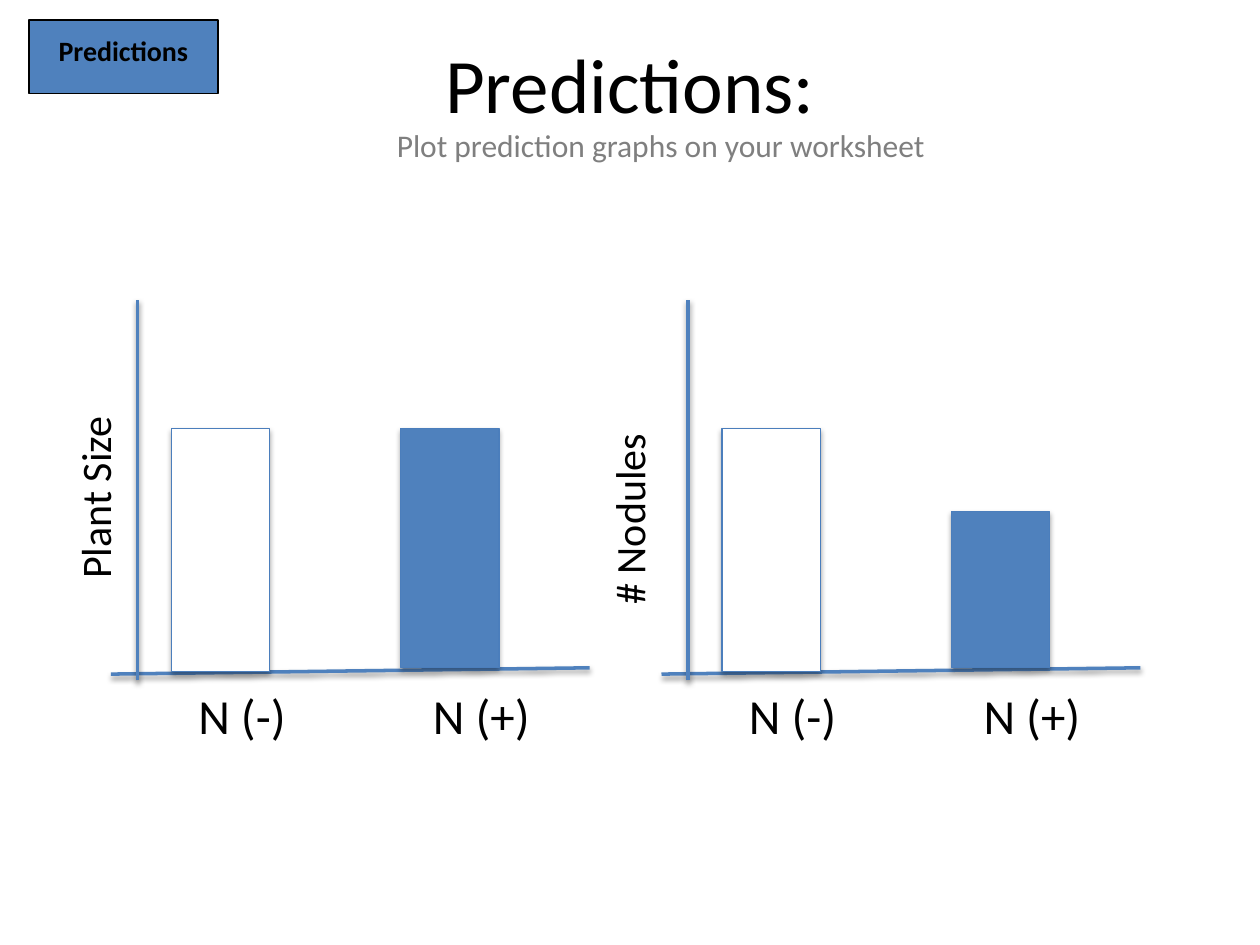
from lxml import etree
from pptx import Presentation, util as u
from pptx.dml.color import RGBColor
from pptx.enum import shapes, text
from pptx.oxml.ns import qn

COLUMNS, ROWS = 100, 75
BLUE, EDGE, BLACK, WHITE, GRAY = "4F81BD", "4B7EBC", "000000", "FFFFFF", "7F7F7F"

deck = Presentation()
deck.slide_width, deck.slide_height = u.Inches(10), u.Inches(7.5)
page = deck.slides.add_slide(deck.slide_layouts[6])


def color(code):
    return RGBColor.from_string(code)


def across(columns):
    return round(deck.slide_width * columns / COLUMNS)


def down(rows):
    return round(deck.slide_height * rows / ROWS)


def place(left, top, width, height):
    return across(left), down(top), across(width), down(height)


def add_shadow(item, opacity, distance):
    """Give a shape or connector a soft shadow that falls straight down."""
    properties = item._element.spPr
    effects = properties.find(qn("a:effectLst"))
    if effects is None:
        effects = etree.SubElement(properties, qn("a:effectLst"))
    shadow = etree.SubElement(effects, qn("a:outerShdw"), blurRad=str(u.Pt(3.1)),
                              dist=str(u.Pt(distance)), dir="5400000", rotWithShape="0")
    tone = etree.SubElement(shadow, qn("a:srgbClr"), val=BLACK)
    etree.SubElement(tone, qn("a:alpha"), val=str(opacity * 1000))


def add_text(words, box, size, ink=BLACK, bold=False, rotation=0,
             anchor=text.MSO_ANCHOR.TOP):
    label = page.shapes.add_textbox(*place(*box))
    label.rotation = rotation
    frame = label.text_frame
    frame.word_wrap = True
    frame.vertical_anchor = anchor
    para = frame.paragraphs[0]
    para.text = words
    para.alignment = text.PP_ALIGN.CENTER
    para.font.name, para.font.size, para.font.bold = "Calibri", u.Pt(size), bold
    para.font.color.rgb = color(ink)


def add_block(box, fill, edge):
    block = page.shapes.add_shape(shapes.MSO_SHAPE.RECTANGLE, *place(*box))
    block.shadow.inherit = False
    block.fill.solid()
    block.fill.fore_color.rgb = color(fill)
    block.line.color.rgb = color(edge)
    block.line.width = u.Pt(0.75)
    return block


def add_axis(x1, y1, x2, y2):
    axis = page.shapes.add_connector(shapes.MSO_CONNECTOR.STRAIGHT, across(x1),
                                     down(y1), across(x2), down(y2))
    axis.line.color.rgb = color(BLUE)
    axis.line.width = u.Pt(2)
    add_shadow(axis, 38, 1.6)


def add_heading(left, top, width, height):
    add_text("Predictions:", (left, top, width, height), 44,
             anchor=text.MSO_ANCHOR.MIDDLE)


def add_graph(left, top, width, height, measure, measure_center, bar_tops):
    """Sketch two bars on a pair of axes; centre and tops are offsets in the box."""
    # Axes
    baseline = top + height
    add_axis(left, baseline - 0.5, left + width, baseline - 1)
    add_axis(left + 2.1, baseline, left + 2.1, top)

    # Group names, one per half of the graph
    half = width / 2
    for index, name in enumerate(("N (-)", "N (+)")):
        add_text(name, (left + 1.8 + index * half, baseline - 0.1, 17.2, 5.7), 28)

    # Bars, standing on the slightly sloping baseline
    for index, (bar_top, fill) in enumerate(zip(bar_tops, (WHITE, BLUE))):
        foot = height - 0.7 - 0.3 * index
        bar = add_block((left + 4.8 + index * 18.2, top + bar_top, 7.8, foot - bar_top),
                        fill, EDGE)
        add_shadow(bar, 35, 1.8)

    # Upright name of the measure
    length, depth = 22.8, 5
    x, y = measure_center
    add_text(measure, (left + x - length / 2, top + y - depth / 2, length, depth),
             24, rotation=270)


def add_tag(left, top, width, height):
    add_block((left, top, width, height), BLUE, BLACK)
    add_text("Predictions", (left, top + 0.6, width, 3.7), 16, bold=True)


add_heading(5, 0.3, 90, 12.5)
add_graph(8.8, 23.8, 38, 30.2, "Plant Size", (-1.3, 15.7), (10.2, 10.2))
add_graph(52.5, 23.8, 38, 30.2, "# Nodules", (-2.6, 17.4), (10.2, 16.8))
add_text("Plot prediction graphs on your worksheet", (26.9, 9.5, 51.1, 4), 18, GRAY)
add_tag(2.3, 1.6, 15, 5.8)

deck.save("out.pptx")
